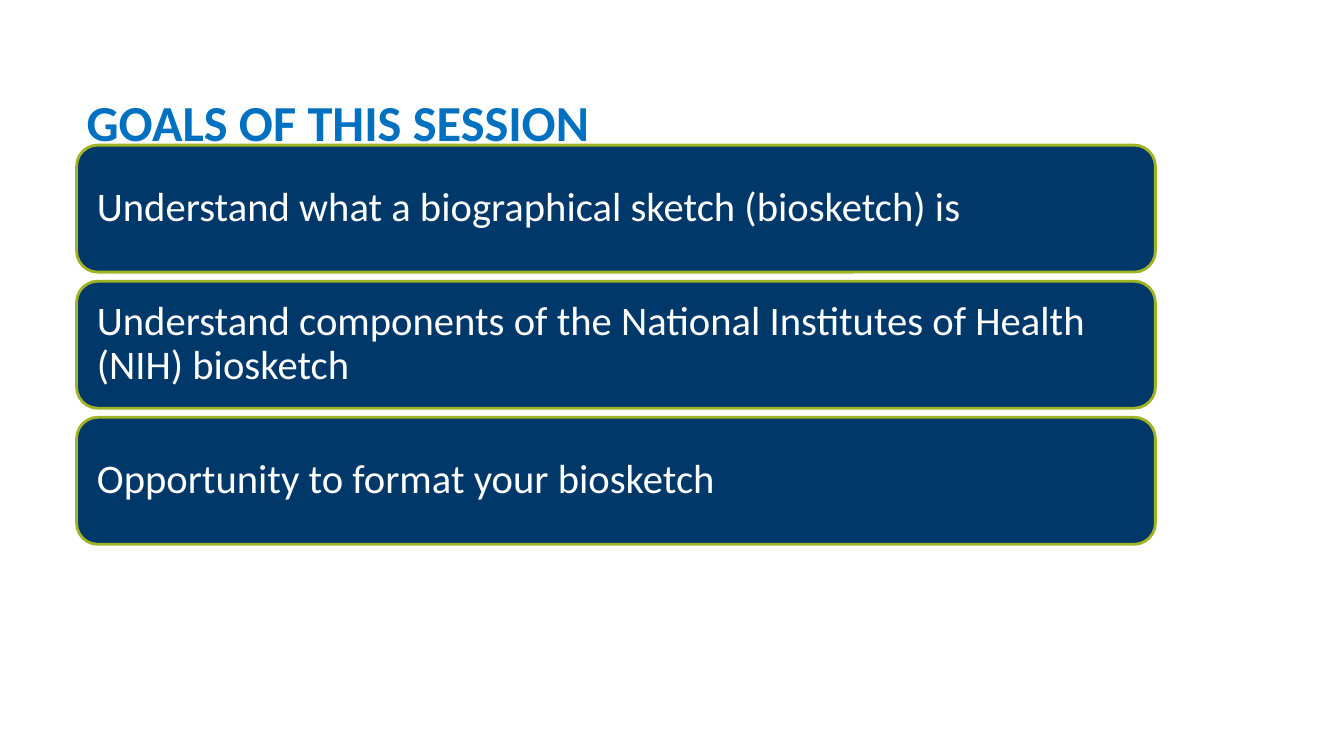
from pptx import Presentation
from pptx.dml.color import RGBColor
from pptx.enum.shapes import MSO_SHAPE
from pptx.enum.text import MSO_ANCHOR, PP_ALIGN
from pptx.util import Emu, Pt

ROUND = MSO_SHAPE.ROUNDED_RECTANGLE
MIDDLE, BOTTOM = MSO_ANCHOR.MIDDLE, MSO_ANCHOR.BOTTOM
LEFT = PP_ALIGN.LEFT

SCALE = 9144  # EMU per px, 100 px to the inch
FONT = "Calibri"
COLORS = {"title": "0070C0", "card": "00386A", "edge": "A0B325", "text": "FFFFFF"}
GOALS = [
    "Understand what a biographical sketch (biosketch) is",
    "Understand components of the National Institutes of Health (NIH) biosketch",
    "Opportunity to format your biosketch",
]


def px(n):
    return Emu(n * SCALE)


def color(name):
    return RGBColor.from_string(COLORS[name])


def write(shape, text, size, tint, anchor, pad, bold=False):
    frame = shape.text_frame
    frame.word_wrap = True
    frame.vertical_anchor = anchor
    frame.margin_left = frame.margin_right = px(pad[0])
    frame.margin_top = frame.margin_bottom = px(pad[1])
    para = frame.paragraphs[0]
    para.text = text
    para.alignment = LEFT
    para.line_spacing = 0.9
    font = para.font
    font.name, font.size, font.bold = FONT, Pt(size), bold
    font.color.rgb = color(tint)


def add_card(slide, text, top):
    card = slide.shapes.add_shape(ROUND, px(76), px(top), px(1070), px(126))
    card.shadow.inherit = False
    card.fill.solid()
    card.fill.fore_color.rgb = color("card")
    card.line.color.rgb = color("edge")
    card.line.width = Pt(2)
    write(card, text, 29, "text", MIDDLE, (14, 14))


def add_title(slide, text):
    box = slide.shapes.add_textbox(px(76), px(70), px(648), px(86))
    write(box, text, 36, "title", BOTTOM, (10, 5), bold=True)


def main():
    deck = Presentation()
    deck.slide_width, deck.slide_height = px(1333), px(750)
    slide = deck.slides.add_slide(deck.slide_layouts[6])

    # Goal cards, evenly stacked
    for i, goal in enumerate(GOALS):
        add_card(slide, goal, 144 + i * 135)

    # Title, in front of the first card
    add_title(slide, "GOALS OF THIS SESSION")

    deck.save("out.pptx")


if __name__ == "__main__":
    main()
